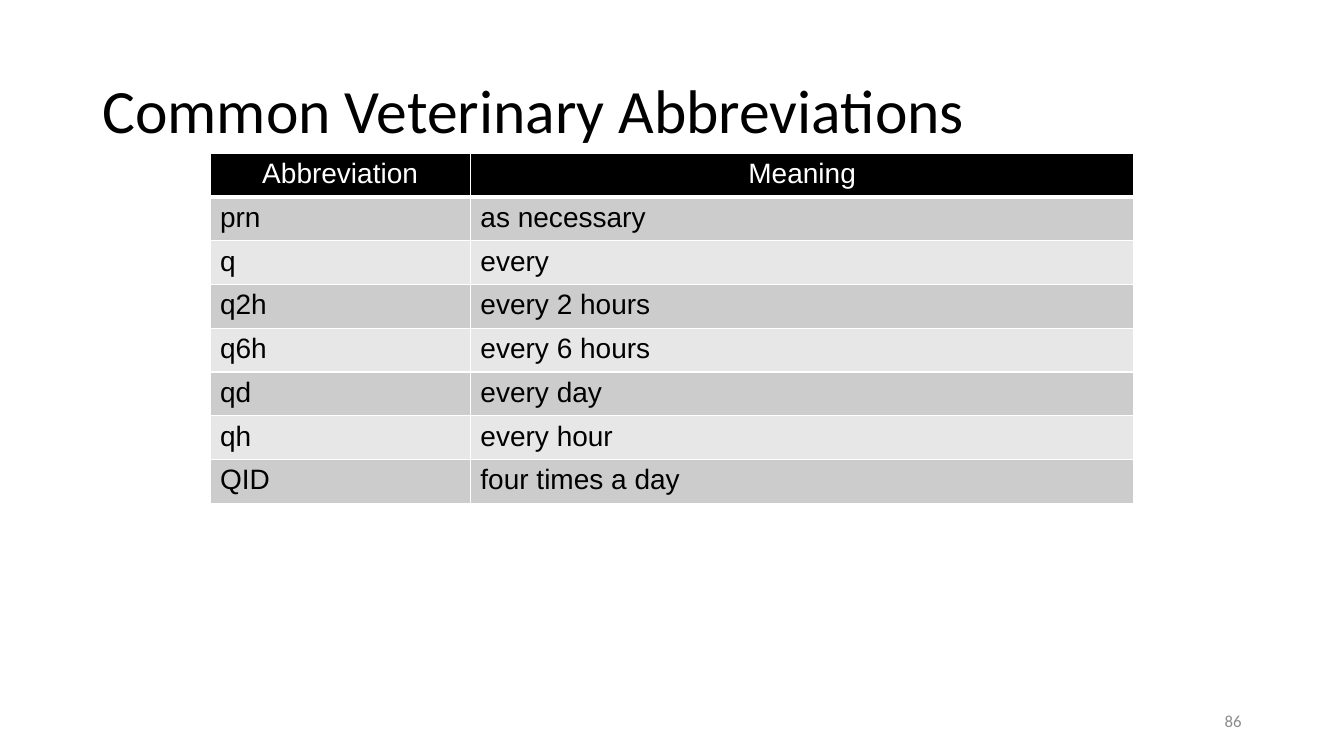
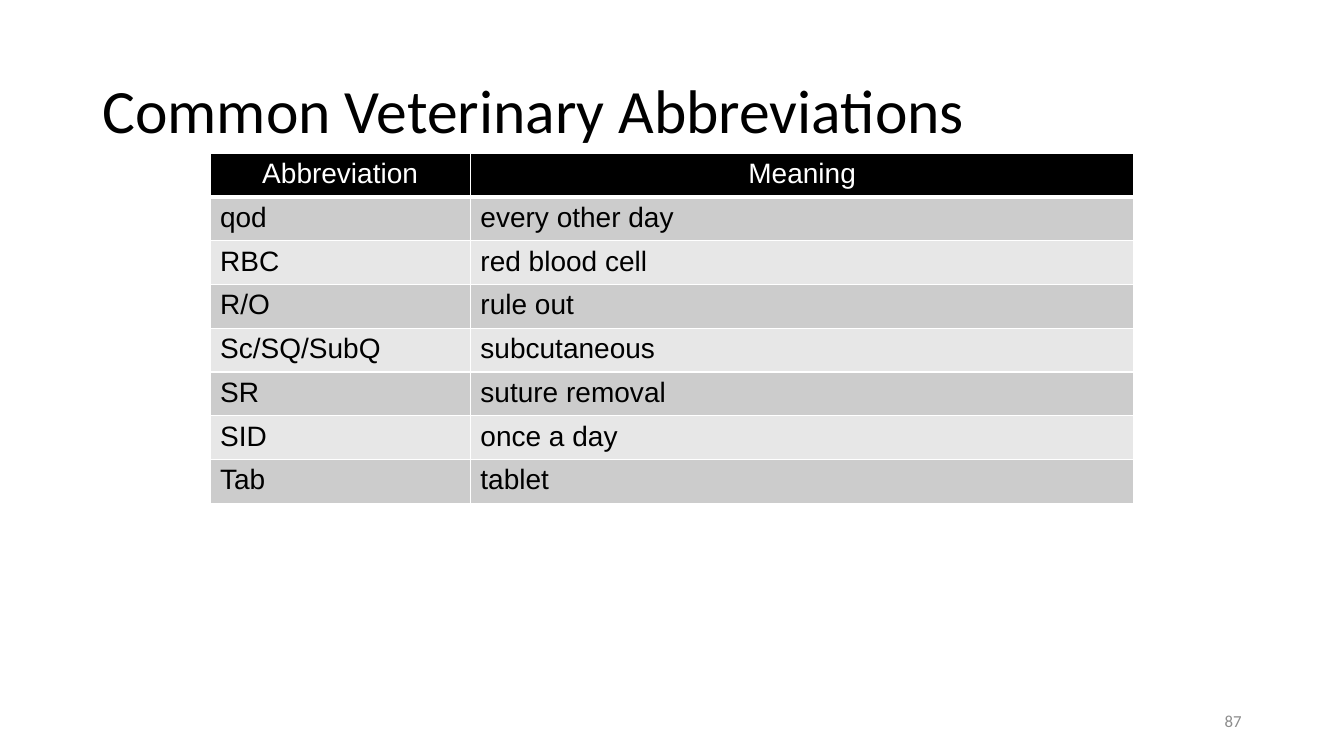
"""Build two slides of common veterinary abbreviations."""
from lxml.etree import SubElement
from pptx import Presentation
from pptx.dml.color import RGBColor
from pptx.enum.text import MSO_ANCHOR, PP_ALIGN
from pptx.oxml.ns import qn
from pptx.util import Pt

BLACK = RGBColor(0x00, 0x00, 0x00)
WHITE = RGBColor(0xFF, 0xFF, 0xFF)
GRAY = RGBColor(0x8C, 0x8C, 0x8C)
DARK_BAND = RGBColor(0xCC, 0xCC, 0xCC)
LIGHT_BAND = RGBColor(0xE7, 0xE7, 0xE7)

TITLE = "Common Veterinary Abbreviations"
HEADER = ("Abbreviation", "Meaning")
PAGES = {
    86: [
        ("prn", "as necessary"),
        ("q", "every"),
        ("q2h", "every 2 hours"),
        ("q6h", "every 6 hours"),
        ("qd", "every day"),
        ("qh", "every hour"),
        ("QID", "four times a day"),
    ],
    87: [
        ("qod", "every other day"),
        ("RBC", "red blood cell"),
        ("R/O", "rule out"),
        ("Sc/SQ/SubQ", "subcutaneous"),
        ("SR", "suture removal"),
        ("SID", "once a day"),
        ("Tab", "tablet"),
    ],
}

TITLE_BOX = (66, 28.8, 828, 104.4)
NUMBER_BOX = (678, 500.4, 216, 28.8)
TABLE_LEFT, TABLE_TOP = 150, 109.5
COLUMN_WIDTHS = (186, 474)
HEADER_HEIGHT, ROW_HEIGHT = 30, 29.6

TITLE_FONT = {"name": "Calibri", "size": Pt(44), "bold": False}
NUMBER_FONT = {"name": "Calibri", "size": Pt(12), "bold": False}
CELL_FONT = {"name": "Arial", "size": Pt(20), "bold": False}


def write(text_frame, text, font, color, alignment):
    text_frame.text = text
    paragraph = text_frame.paragraphs[0]
    paragraph.alignment = alignment
    run_font = paragraph.runs[0].font
    for name, value in font.items():
        setattr(run_font, name, value)
    run_font.color.rgb = color
    return paragraph


def add_borders(cell, bottom_width):
    properties = cell._tc.get_or_add_tcPr()
    widths = {"lnL": 1, "lnR": 1, "lnT": 1, "lnB": bottom_width}
    for position, (tag, width) in enumerate(widths.items()):
        line = SubElement(properties, qn(f"a:{tag}"), w=str(Pt(width)))
        fill = SubElement(line, qn("a:solidFill"))
        SubElement(fill, qn("a:srgbClr"), val=str(WHITE))
        properties.insert(position, line)


def add_title(slide):
    title = slide.shapes.title
    title.left, title.top, title.width, title.height = map(Pt, TITLE_BOX)
    title.text_frame.vertical_anchor = MSO_ANCHOR.MIDDLE
    paragraph = write(title.text_frame, TITLE, TITLE_FONT, BLACK, PP_ALIGN.LEFT)
    paragraph.line_spacing = 0.9


def add_number(slide, number):
    text_frame = slide.shapes.add_textbox(*map(Pt, NUMBER_BOX)).text_frame
    text_frame.word_wrap = True
    text_frame.vertical_anchor = MSO_ANCHOR.MIDDLE
    write(text_frame, str(number), NUMBER_FONT, GRAY, PP_ALIGN.RIGHT)


def add_abbreviations(slide, entries):
    rows = [HEADER, *entries]
    heights = [HEADER_HEIGHT] + [ROW_HEIGHT] * len(entries)
    box = (TABLE_LEFT, TABLE_TOP, sum(COLUMN_WIDTHS), sum(heights))
    table = slide.shapes.add_table(len(rows), len(HEADER), *map(Pt, box)).table
    for column, width in zip(table.columns, COLUMN_WIDTHS):
        column.width = Pt(width)
    for index, (texts, height) in enumerate(zip(rows, heights)):
        table.rows[index].height = Pt(height)
        if index == 0:
            fill, color, alignment, bottom = BLACK, WHITE, PP_ALIGN.CENTER, 3
        else:
            fill = DARK_BAND if index % 2 else LIGHT_BAND
            color, alignment, bottom = BLACK, PP_ALIGN.LEFT, 1
        for cell, text in zip(table.rows[index].cells, texts):
            cell.fill.solid()
            cell.fill.fore_color.rgb = fill
            write(cell.text_frame, text, CELL_FONT, color, alignment)
            add_borders(cell, bottom)


def main():
    presentation = Presentation()
    presentation.slide_width, presentation.slide_height = Pt(960), Pt(540)
    for number, entries in PAGES.items():
        slide = presentation.slides.add_slide(presentation.slide_layouts[5])
        add_title(slide)
        add_number(slide, number)
        add_abbreviations(slide, entries)
    presentation.save("out.pptx")


if __name__ == "__main__":
    main()
